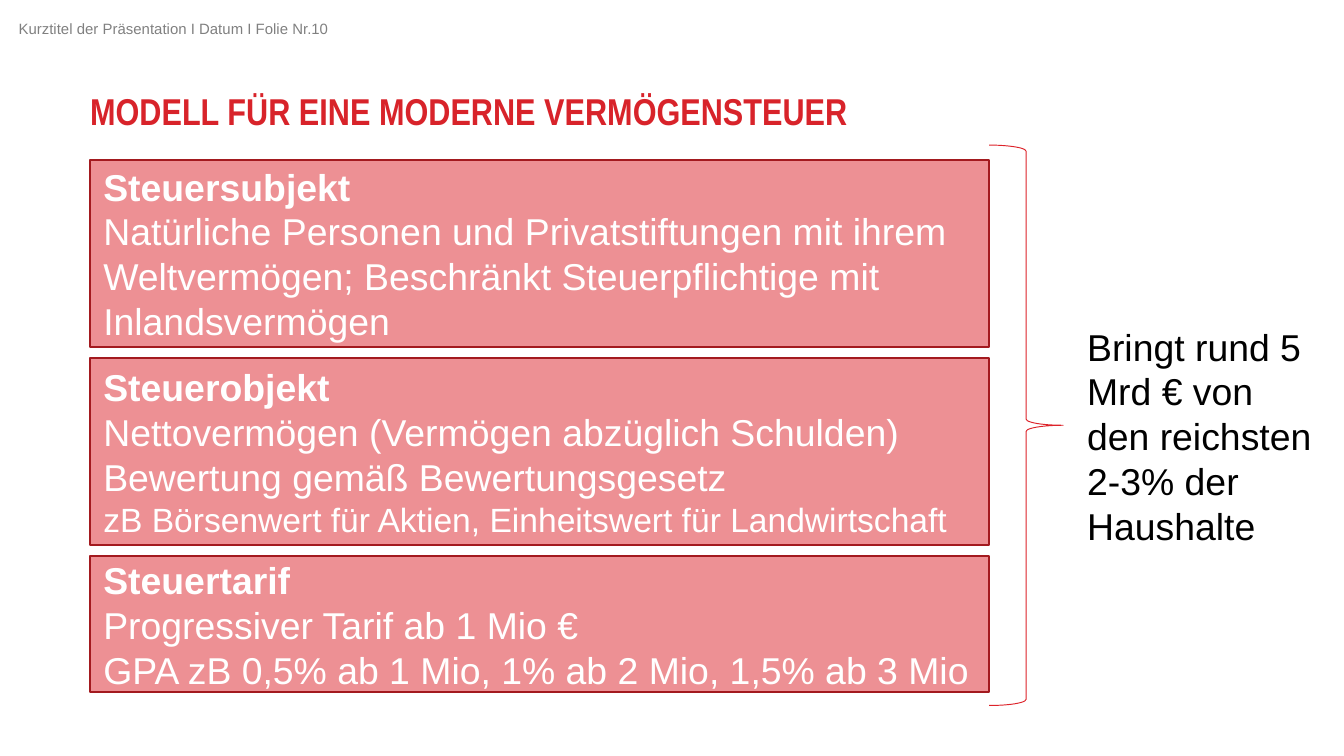
from dataclasses import dataclass

from lxml.etree import SubElement
from pptx import Presentation
from pptx.dml.color import RGBColor
from pptx.enum.shapes import MSO_SHAPE
from pptx.enum.text import MSO_ANCHOR, MSO_AUTO_SIZE, PP_ALIGN
from pptx.oxml.ns import qn
from pptx.util import Inches, Pt

RED = "DD232A"
DARK_RED = "A31A1F"
TITLE_RED = "D8232A"
WHITE = "FFFFFF"
GRAY = "808080"
BLACK = "000000"
PAGE_WIDTH = 10
PAGE_HEIGHT = PAGE_WIDTH * 9 / 16
LEFT = 0.67
PANEL_WIDTH = 6.69
PANELS_TOP = 1.19
PANELS_BOTTOM = 5.15


@dataclass
class Line:
    text: str
    size: float = 20
    bold: bool = False
    color: str = WHITE
    font: str = "Arial"


@dataclass
class Panel:
    height: float
    lines: list[Line]


PANELS = [
    Panel(1.39, [
        Line("Steuersubjekt", bold=True),
        Line("Natürliche Personen und Privatstiftungen mit ihrem "
             "Weltvermögen; Beschränkt Steuerpflichtige mit Inlandsvermögen"),
    ]),
    Panel(1.39, [
        Line("Steuerobjekt", bold=True),
        Line("Nettovermögen (Vermögen abzüglich Schulden)"),
        Line("Bewertung gemäß Bewertungsgesetz"),
        Line("zB Börsenwert für Aktien, Einheitswert für Landwirtschaft", size=18),
    ]),
    Panel(1.01, [
        Line("Steuertarif", bold=True),
        Line("Progressiver Tarif ab 1 Mio €"),
        Line("GPA zB 0,5% ab 1 Mio, 1% ab 2 Mio, 1,5% ab 3 Mio"),
    ]),
]


def rgb(color: str) -> RGBColor:
    return RGBColor.from_string(color)


def set_values(target, values: dict) -> None:
    for name, value in values.items():
        setattr(target, name, value)


def write_lines(frame, lines: list[Line], frame_format: dict) -> None:
    set_values(frame, {"word_wrap": True, "auto_size": MSO_AUTO_SIZE.NONE} | frame_format)
    for index, line in enumerate(lines):
        para = frame.add_paragraph() if index else frame.paragraphs[0]
        para.alignment = PP_ALIGN.LEFT
        span = para.add_run()
        span.text = line.text
        set_values(span.font, {"name": line.font, "size": Pt(line.size), "bold": line.bold})
        span.font.color.rgb = rgb(line.color)


def add_outlined(page, kind, bounds: tuple, line_color: str, line_width: float):
    shape = page.shapes.add_shape(kind, *map(Inches, bounds))
    shape.shadow.inherit = False
    shape.line.color.rgb = rgb(line_color)
    shape.line.width = Pt(line_width)
    return shape


def add_panel(page, panel: Panel, top: float) -> None:
    bounds = (LEFT, top, PANEL_WIDTH, panel.height)
    box = add_outlined(page, MSO_SHAPE.RECTANGLE, bounds, DARK_RED, 1)
    box.fill.solid()
    box.fill.fore_color.rgb = rgb(RED)
    color = box.element.spPr.find(qn("a:solidFill"))[0]
    SubElement(color, qn("a:alpha"), val="50000")
    write_lines(box.text_frame, panel.lines, {"vertical_anchor": MSO_ANCHOR.MIDDLE})


def add_panels(page, panels: list[Panel]) -> None:
    free_height = PANELS_BOTTOM - PANELS_TOP - sum(panel.height for panel in panels)
    gap = free_height / (len(panels) - 1)
    top = PANELS_TOP
    for panel in panels:
        add_panel(page, panel, top)
        top += panel.height + gap


def add_text(page, bounds: tuple, line: Line) -> None:
    box = page.shapes.add_textbox(*map(Inches, bounds))
    write_lines(box.text_frame, [line], {"vertical_anchor": MSO_ANCHOR.TOP})


def add_title(page, line: Line) -> None:
    title = page.shapes.title
    set_values(title, {"left": Inches(LEFT), "top": Inches(0.69),
                       "width": Inches(8.66), "height": Inches(0.3)})
    write_lines(title.text_frame, [line], {
        "vertical_anchor": MSO_ANCHOR.TOP,
        "margin_left": 0, "margin_top": 0, "margin_right": 0, "margin_bottom": 0,
    })
    title.text_frame.paragraphs[0].line_spacing = 0.9


def main() -> None:
    deck = Presentation()
    set_values(deck, {"slide_width": Inches(PAGE_WIDTH), "slide_height": Inches(PAGE_HEIGHT)})
    page = deck.slides.add_slide(deck.slide_layouts[5])

    add_text(page, (0.04, 0.1, 4.87, 0.24),
             Line("Kurztitel der Präsentation I Datum I Folie Nr.10", size=8, color=GRAY))
    add_title(page, Line("MODELL FÜR EINE MODERNE VERMÖGENSTEUER",
                         bold=True, color=TITLE_RED, font="Arial Narrow"))
    add_panels(page, PANELS)

    brace_bounds = (LEFT + PANEL_WIDTH, 1.08, 0.55, 4.17)
    brace = add_outlined(page, MSO_SHAPE.RIGHT_BRACE, brace_bounds, RED, 0.5)
    brace.fill.background()
    add_text(page, (7.99, 2.36, 1.89, 1.78),
             Line("Bringt rund 5 Mrd € von den reichsten 2-3% der Haushalte", color=BLACK))

    deck.save("out.pptx")


if __name__ == "__main__":
    main()
